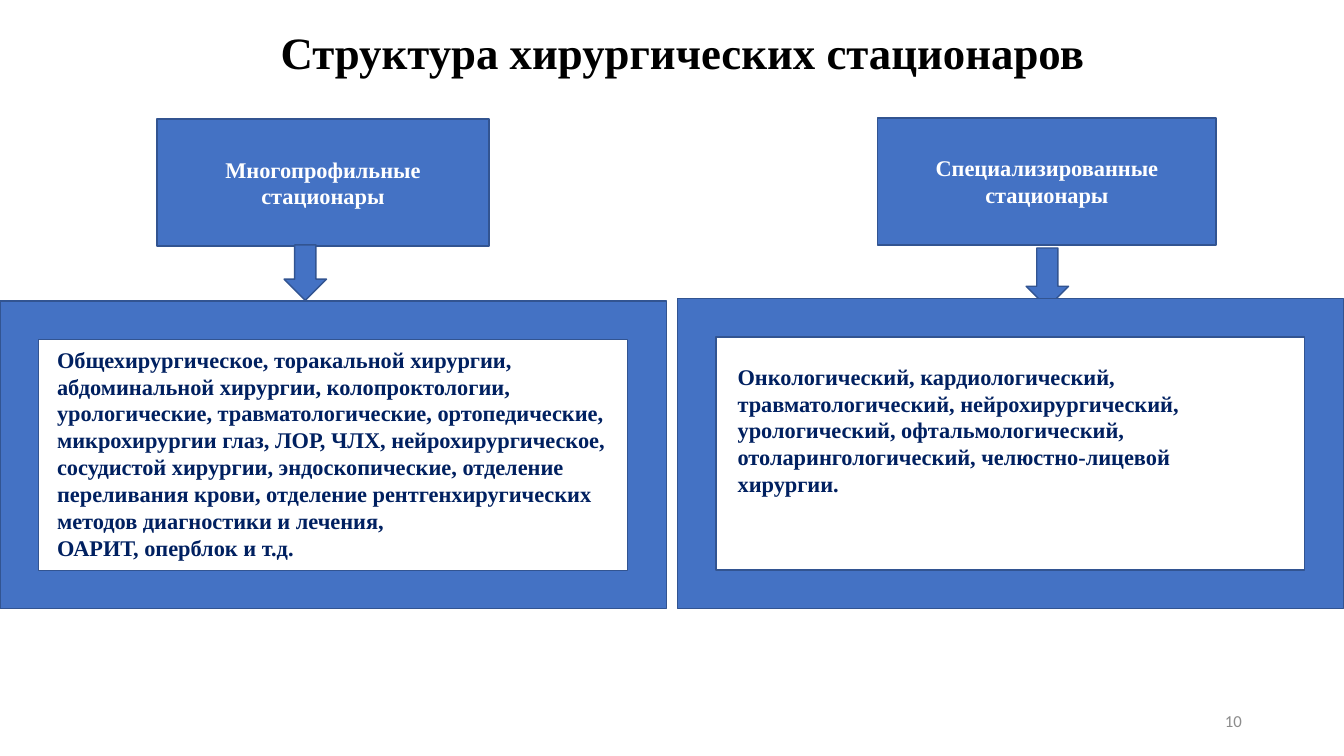
"""Builds the slide on the structure of surgical hospitals."""
from dataclasses import dataclass

from pptx import Presentation
from pptx import util as u
from pptx.dml.color import RGBColor
from pptx.enum import shapes, text

COLORS = {"black": "000000", "white": "FFFFFF", "blue": "4472C4",
          "edge": "325491", "navy": "002060", "gray": "8C8C8C"}
SERIF = "Times New Roman"
SHAPE = shapes.MSO_SHAPE
ALIGN = text.PP_ALIGN
ANCHOR = text.MSO_ANCHOR


@dataclass(frozen=True)
class Box:
    left: float
    top: float
    width: float
    height: float

    def lengths(self) -> list[u.Cm]:
        return [u.Cm(v) for v in (self.left, self.top, self.width, self.height)]


@dataclass(frozen=True)
class Style:
    size: int
    color: str
    align: ALIGN
    anchor: ANCHOR = ANCHOR.MIDDLE
    font: str = SERIF
    bold: bool = True
    spacing: float = 1.0


@dataclass(frozen=True)
class Column:
    heading: str
    heading_box: Box
    arrow_box: Box
    frame_box: Box
    departments: str
    departments_box: Box


TITLE = Style(32, "black", ALIGN.CENTER, spacing=0.9)
HEADING = Style(16, "white", ALIGN.CENTER)
DEPARTMENTS = Style(16, "navy", ALIGN.LEFT, ANCHOR.TOP)
NUMBER = Style(12, "gray", ALIGN.RIGHT, font="Calibri", bold=False)

COLUMNS = [
    Column("Многопрофильные стационары",
           Box(3.96, 3, 8.36, 3.2), Box(7.16, 6.17, 1.07, 1.4),
           Box(0, 7.59, 16.79, 7.75),
           "Общехирургическое, торакальной хирургии, абдоминальной хирургии, "
           "колопроктологии, урологические, травматологические, ортопедические, "
           "микрохирургии глаз, ЛОР, ЧЛХ, нейрохирургическое, сосудистой хирургии, "
           "эндоскопические, отделение переливания крови, отделение "
           "рентгенхиругических методов диагностики и лечения,\n"
           "ОАРИТ, оперблок и т.д.",
           Box(1.19, 8.59, 14.94, 5.74)),
    Column("Специализированные стационары",
           Box(22.12, 2.97, 8.53, 3.2), Box(25.86, 6.25, 1.07, 1.5),
           Box(17.07, 7.52, 16.79, 7.82),
           "Онкологический, кардиологический, травматологический, "
           "нейрохирургический, урологический, офтальмологический, "
           "отоларингологический, челюстно-лицевой хирургии.",
           Box(18.34, 9.02, 13.59, 3.68)),
]


def rgb(name: str) -> RGBColor:
    return RGBColor.from_string(COLORS[name])


def write(sp, content: str, style: Style) -> None:
    tf = sp.text_frame
    tf.word_wrap = True
    tf.vertical_anchor = style.anchor
    tf.text = content
    for p in tf.paragraphs:
        p.alignment = style.align
        p.line_spacing = style.spacing
        p.font.name = style.font
        p.font.size = u.Pt(style.size)
        p.font.bold = style.bold
        p.font.color.rgb = rgb(style.color)


def add_text(s, box: Box, content: str, style: Style) -> None:
    write(s.shapes.add_textbox(*box.lengths()), content, style)


def add_block(s, kind: SHAPE, box: Box):
    sp = s.shapes.add_shape(kind, *box.lengths())
    sp.shadow.inherit = False
    sp.fill.solid()
    sp.fill.fore_color.rgb = rgb("blue")
    sp.line.color.rgb = rgb("edge")
    sp.line.width = u.Pt(1)
    return sp


def add_column(s, column: Column) -> None:
    heading = add_block(s, SHAPE.FLOWCHART_PROCESS, column.heading_box)
    write(heading, column.heading, HEADING)
    add_block(s, SHAPE.DOWN_ARROW, column.arrow_box)
    add_block(s, SHAPE.FRAME, column.frame_box)
    add_text(s, column.departments_box, column.departments, DEPARTMENTS)


def main() -> None:
    prs = Presentation()
    prs.slide_width, prs.slide_height = u.Cm(33.87), u.Cm(19.05)
    s = prs.slides.add_slide(prs.slide_layouts[6])
    add_text(s, Box(1.47, -0.53, 31.47, 3.81), "Структура хирургических стационаров", TITLE)
    for column in COLUMNS:
        add_column(s, column)
    add_text(s, Box(23.93, 17.65, 7.62, 1.02), "10", NUMBER)
    prs.save("out.pptx")


if __name__ == "__main__":
    main()
